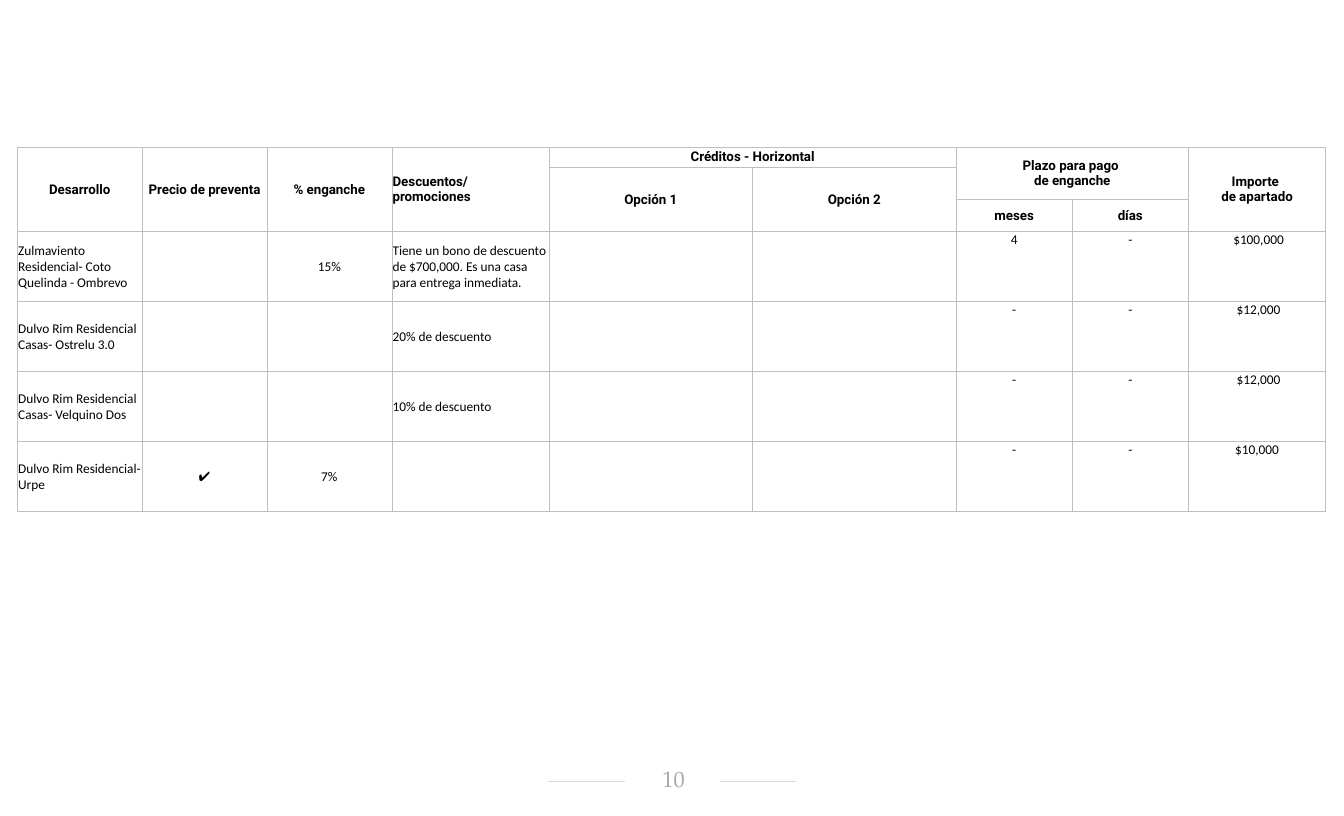
from lxml.etree import SubElement
from pptx import Presentation
from pptx.dml.color import RGBColor
from pptx.enum.shapes import MSO_CONNECTOR, MSO_SHAPE
from pptx.enum.text import MSO_ANCHOR, PP_ALIGN
from pptx.oxml.ns import qn
from pptx.util import Inches, Pt

COLORS = {"text": "000000", "border": "BFBFBF", "rule": "D9D9D9",
          "number": "A6A6A6", "paper": "FFFFFF"}


def color(name):
    return RGBColor.from_string(COLORS[name])


def add_borders(cell):
    properties = cell._tc.get_or_add_tcPr()
    for position, side in enumerate(("a:lnL", "a:lnR", "a:lnT", "a:lnB")):
        line = properties.makeelement(qn(side), {"w": str(Pt(0.25))})
        fill = SubElement(line, qn("a:solidFill"))
        SubElement(fill, qn("a:srgbClr"), val=COLORS["border"])
        properties.insert(position, line)


deck = Presentation()
deck.slide_width, deck.slide_height = Inches(14), Inches(8.5)
page = deck.slides.add_slide(deck.slide_layouts[6])

# Page number over a thin rule
rule = page.shapes.add_connector(MSO_CONNECTOR.STRAIGHT, Inches(5.71), Inches(8.14),
                                 Inches(8.29), Inches(8.14))
rule.line.color.rgb = color("rule")
rule.line.width = Pt(0.75)
SubElement(rule._element.spPr, qn("a:effectLst"))

number_box = page.shapes.add_shape(MSO_SHAPE.RECTANGLE, Inches(6.51), Inches(7.98),
                                   Inches(0.99), Inches(0.29))
number_box.shadow.inherit = False
number_box.fill.solid()
number_box.fill.fore_color.rgb = color("paper")
number_box.line.fill.background()
frame = number_box.text_frame
frame.vertical_anchor = MSO_ANCHOR.MIDDLE
frame.margin_left, frame.margin_right = Inches(0.12), Inches(0.1)
frame.margin_top, frame.margin_bottom = Inches(0.02), Inches(0.05)
para = frame.paragraphs[0]
para.text = "10"
para.alignment = PP_ALIGN.CENTER
para.font.name = "TeX Gyre Pagella"
para.font.size = Pt(16.7)
para.font.color.rgb = color("number")

# Table content: three header rows, then one row per development
rows = [
    ["Desarrollo", "Precio de preventa", "% enganche", "Descuentos/ promociones",
     "Créditos - Horizontal", "", "Plazo para pago \vde enganche", "", "Importe \vde apartado"],
    ["", "", "", "", "Opción 1", "Opción 2", "", "", ""],
    ["", "", "", "", "", "", "meses", "días", ""],
    ["Zulmaviento Residencial- Coto Quelinda - Ombrevo", "", "15%",
     "Tiene un bono de descuento de $700,000. Es una casa para entrega inmediata.",
     "", "", "4", "-", " $100,000"],
    ["Dulvo Rim Residencial Casas- Ostrelu 3.0", "", "", "20% de descuento",
     "", "", "-", "-", " $12,000"],
    ["Dulvo Rim Residencial Casas- Velquino Dos", "", "", "10% de descuento",
     "", "", "-", "-", " $12,000"],
    ["Dulvo Rim Residencial- Urpe", "✔", "7%", "", "", "", "-", "-", "$10,000"],
]
HEADER_ROWS = 3
widths = [1.3, 1.3, 1.3, 1.64, 2.12, 2.12, 1.21, 1.21, 1.43]
heights = [0.21, 0.33, 0.33] + [0.73] * 4

table_frame = page.shapes.add_table(len(rows), len(widths), Inches(0.18), Inches(1.53),
                                    Inches(sum(widths)), Inches(sum(heights)))
table = table_frame.table
table.first_row = table.horz_banding = False
for column, width in zip(table.columns, widths):
    column.width = Inches(width)
for row, height in zip(table.rows, heights):
    row.height = Inches(height)

# Cell text and format
for row_index, texts in enumerate(rows):
    is_header = row_index < HEADER_ROWS
    for column_index, text in enumerate(texts):
        cell = table.cell(row_index, column_index)
        cell.fill.background()
        add_borders(cell)
        cell.margin_left = cell.margin_right = cell.margin_top = Inches(0.01)
        cell.margin_bottom = 0
        is_top = not is_header and column_index >= 6
        cell.vertical_anchor = MSO_ANCHOR.TOP if is_top else MSO_ANCHOR.MIDDLE
        cell.text = text
        para = cell.text_frame.paragraphs[0]
        is_left = column_index == 3 or (column_index == 0 and not is_header)
        para.alignment = PP_ALIGN.LEFT if is_left else PP_ALIGN.CENTER
        para.font.name = "Roboto" if is_header else "Arial" if text == "✔" else "Calibri"
        para.font.size = Pt(10)
        para.font.bold = is_header
        para.font.color.rgb = color("text")

# Merged headers: first and last cell of each block
for first, last in [((0, 0), (2, 0)), ((0, 1), (2, 1)), ((0, 2), (2, 2)), ((0, 3), (2, 3)),
                    ((0, 4), (0, 5)), ((0, 6), (1, 7)), ((0, 8), (2, 8)),
                    ((1, 4), (2, 4)), ((1, 5), (2, 5))]:
    table.cell(*first).merge(table.cell(*last))

deck.save("out.pptx")
